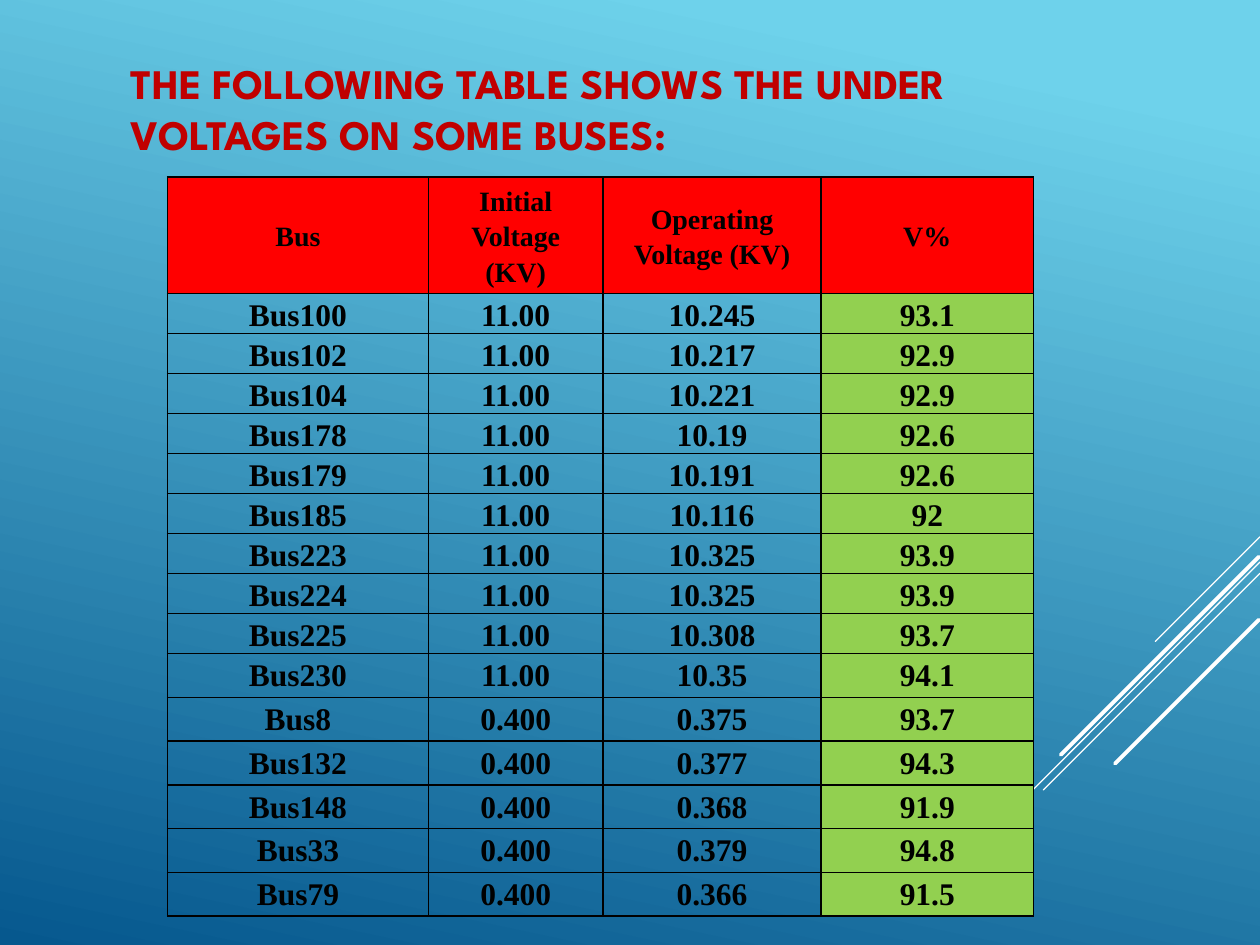
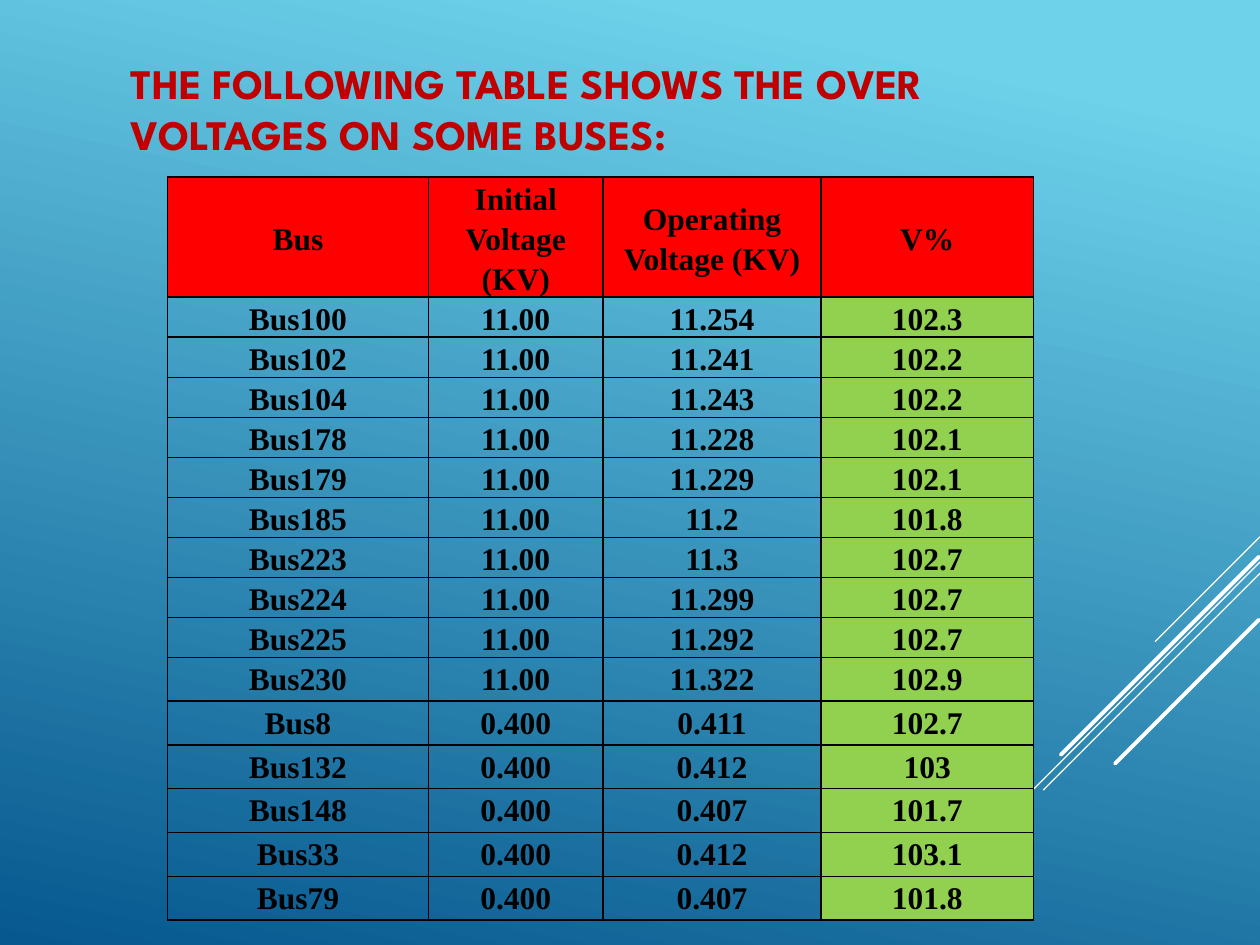
"""Build two slides that tabulate under and over voltages on some buses."""
from typing import NamedTuple

from lxml import etree
from pptx import Presentation
from pptx.dml.color import RGBColor
from pptx.enum.shapes import MSO_CONNECTOR
from pptx.enum.text import MSO_ANCHOR, PP_ALIGN
from pptx.oxml.ns import qn
from pptx.util import Inches, Pt

STRAIGHT = MSO_CONNECTOR.STRAIGHT
MIDDLE, TOP = MSO_ANCHOR.MIDDLE, MSO_ANCHOR.TOP
CENTER, LEFT = PP_ALIGN.CENTER, PP_ALIGN.LEFT

SKY = RGBColor(0x6E, 0xD2, 0xEB)
DEEP = RGBColor(0x06, 0x58, 0x8E)
WHITE = RGBColor(0xFF, 0xFF, 0xFF)
BLACK = RGBColor(0x00, 0x00, 0x00)
CRIMSON = RGBColor(0xC0, 0x00, 0x00)
RED = RGBColor(0xFF, 0x00, 0x00)
GREEN = RGBColor(0x92, 0xD0, 0x50)

WIDE, HIGH = Inches(10), Inches(7.5)
LEAD = 1.27
HEADS = ("Bus", "Initial Voltage (KV)", "Operating Voltage (KV)", "V%")
COLS = (20.7, 13.87, 17.3, 16.87)
ROWS = (12.3,) + (4.24,) * 9 + (4.63,) * 6
HIGH_BUS = ("100", "102", "104", "178", "179", "185", "223", "224", "225", "230")
LOW_BUS = ("8", "132", "148", "33", "79")
BUSES = [(f"Bus{n}", "11.00") for n in HIGH_BUS] + [(f"Bus{n}", "0.400") for n in LOW_BUS]


class Ray(NamedTuple):
    """A slanted line, with ends in percent of the slide."""
    x1: float
    y1: float
    x2: float
    y2: float
    points: float


class Style(NamedTuple):
    """The look of one piece of text."""
    font: str
    size: int
    color: RGBColor
    align: PP_ALIGN
    space: float | Pt


class Sheet(NamedTuple):
    """What differs from slide to slide."""
    kind: str
    head: int
    volts: tuple[str, ...]
    rates: tuple[str, ...]


RAYS = (
    Ray(100, 56.8, 91.7, 67.87, 0.75),
    Ray(100, 59.47, 73, 95.6, 0.75),
    Ray(100, 60.67, 82.8, 83.6, 0.75),
    Ray(99.9, 58.93, 84.2, 79.87, 2.25),
    Ray(99.9, 65.6, 88.5, 80.8, 2.25),
)
TITLE = Style("League Spartan", 24, CRIMSON, LEFT, 1.0)

SHEETS = (
    Sheet("UNDER", 16,
          ("10.245", "10.217", "10.221", "10.19", "10.191", "10.116", "10.325", "10.325",
           "10.308", "10.35", "0.375", "0.377", "0.368", "0.379", "0.366"),
          ("93.1", "92.9", "92.9", "92.6", "92.6", "92", "93.9", "93.9",
           "93.7", "94.1", "93.7", "94.3", "91.9", "94.8", "91.5")),
    Sheet("OVER", 18,
          ("11.254", "11.241", "11.243", "11.228", "11.229", "11.2", "11.3", "11.299",
           "11.292", "11.322", "0.411", "0.412", "0.407", "0.412", "0.407"),
          ("102.3", "102.2", "102.2", "102.1", "102.1", "101.8", "102.7", "102.7",
           "102.7", "102.9", "102.7", "103", "101.7", "103.1", "101.8")),
)


def across(share: float) -> int:
    """Turn a percentage of the slide's width into a length."""
    return round(WIDE * share / 100)


def down(share: float) -> int:
    """Turn a percentage of the slide's height into a length."""
    return round(HIGH * share / 100)


def body(size: int) -> Style:
    """Give the style of table text of one size."""
    return Style("Times New Roman", size, BLACK, CENTER, Pt(size * LEAD))


def write(frame, text: str, style: Style) -> None:
    """Put one styled run into a text frame."""
    para = frame.paragraphs[0]
    para.alignment, para.line_spacing = style.align, style.space
    run = para.add_run()
    run.text = text
    font = run.font
    font.name, font.size, font.bold = style.font, Pt(style.size), True
    font.color.rgb = style.color


def paint(slide) -> None:
    """Fill the background and draw the corner rays."""
    fill = slide.background.fill
    fill.gradient()
    fill.gradient_angle = 360 - 102
    for stop, color, place in zip(fill.gradient_stops, (SKY, DEEP), (0.1, 1)):
        stop.color.rgb, stop.position = color, place
    for ray in RAYS:
        line = slide.shapes.add_connector(
            STRAIGHT, across(ray.x1), down(ray.y1), across(ray.x2), down(ray.y2))
        line.line.color.rgb, line.line.width = WHITE, Pt(ray.points)
        line.get_or_add_ln().set("cap", "rnd")
        etree.SubElement(line._element.spPr, qn("a:effectLst"))


def name(slide, text: str) -> None:
    """Add the slide's title."""
    box = slide.shapes.add_textbox(across(9.4), 0, across(75.8), down(22.93))
    frame = box.text_frame
    frame.word_wrap, frame.vertical_anchor = True, MIDDLE
    write(frame, text, TITLE)


def edge(cell) -> None:
    """Draw a thin black border around a cell."""
    props = cell._tc.get_or_add_tcPr()
    for side in "LRTB":
        line = etree.SubElement(props, qn(f"a:ln{side}"), w=str(Pt(1)))
        fill = etree.SubElement(line, qn("a:solidFill"))
        etree.SubElement(fill, qn("a:srgbClr"), val=str(BLACK))


def tint(cell, color: RGBColor | None) -> None:
    """Fill a cell, or leave it clear."""
    if color is None:
        cell.fill.background()
    else:
        cell.fill.solid()
        cell.fill.fore_color.rgb = color


def tabulate(slide, sheet: Sheet) -> None:
    """Add the table of bus voltages."""
    data = [HEADS] + [(*bus, volt, rate)
                      for bus, volt, rate in zip(BUSES, sheet.volts, sheet.rates)]
    table = slide.shapes.add_table(
        len(ROWS), len(COLS), across(13.3), down(18.75),
        across(sum(COLS)), down(sum(ROWS))).table
    table.first_row = table.horz_banding = False
    for col, share in zip(table.columns, COLS):
        col.width = across(share)
    for row, share in zip(table.rows, ROWS):
        row.height = down(share)
    for r, texts in enumerate(data):
        top = r == 0
        style = body(sheet.head if top else 18)
        for c, text in enumerate(texts):
            cell = table.cell(r, c)
            cell.margin_left = cell.margin_right = Inches(0.08)
            cell.margin_top = cell.margin_bottom = 0
            cell.vertical_anchor = MIDDLE if top else TOP
            edge(cell)
            tint(cell, RED if top else GREEN if c == len(COLS) - 1 else None)
            write(cell.text_frame, text, style)


def main() -> None:
    """Build and save the deck."""
    deck = Presentation()
    deck.slide_width, deck.slide_height = WIDE, HIGH
    for sheet in SHEETS:
        slide = deck.slides.add_slide(deck.slide_layouts[6])
        paint(slide)
        name(slide, f"THE FOLLOWING TABLE SHOWS THE {sheet.kind} VOLTAGES ON SOME BUSES:")
        tabulate(slide, sheet)
    deck.save("out.pptx")


if __name__ == "__main__":
    main()
